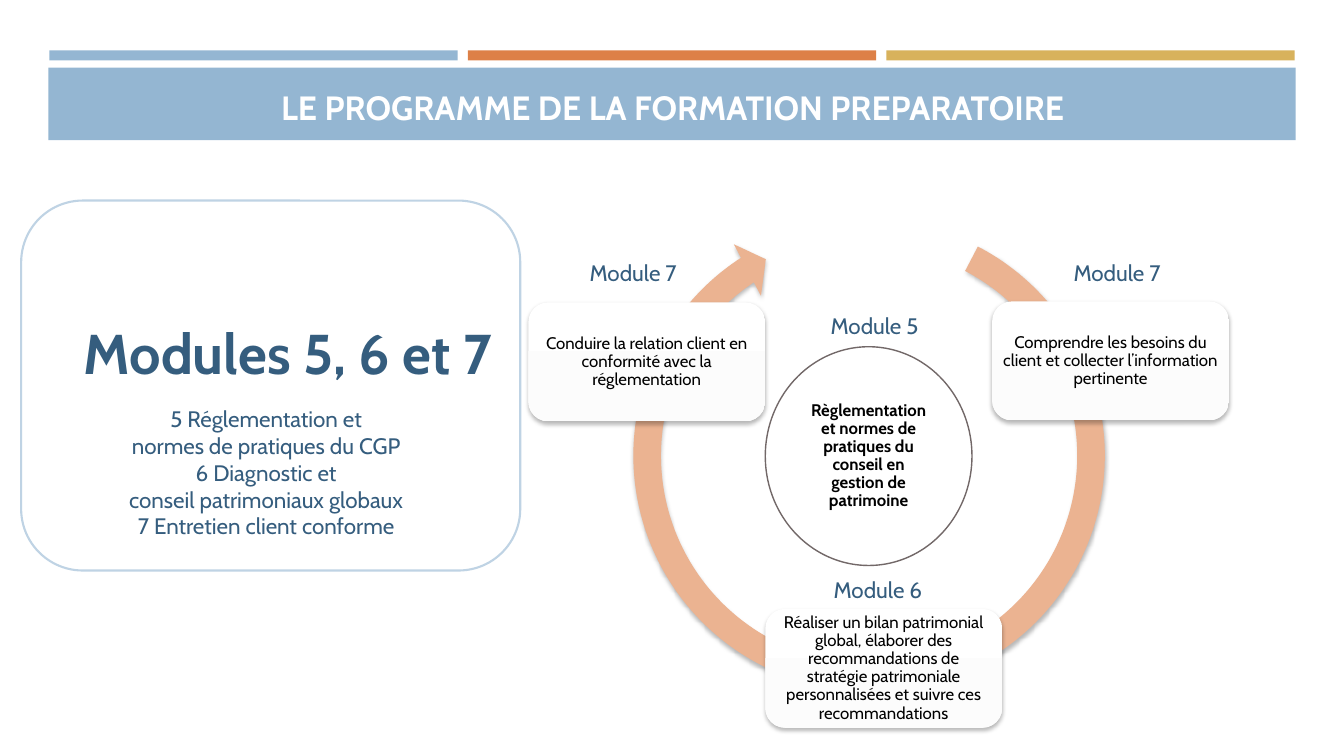
from copy import deepcopy
from lxml.etree import SubElement
from pptx import Presentation
from pptx.dml.color import RGBColor
from pptx.enum.shapes import MSO_SHAPE
from pptx.enum.text import MSO_ANCHOR, PP_ALIGN
from pptx.oxml.ns import qn
from pptx.util import Inches, Pt

FONT = "Cabin"
WHITE = RGBColor(0xFF, 0xFF, 0xFF)
BLACK = RGBColor(0, 0, 0)
PALE = RGBColor(0xFC, 0xFC, 0xFC)
BLUE = RGBColor(0x94, 0xB6, 0xD2)
NAVY = RGBColor(0x35, 0x5D, 0x7E)
SKY = RGBColor(0xBF, 0xD3, 0xE4)
RUST = RGBColor(0xDD, 0x80, 0x47)
GOLD = RGBColor(0xD8, 0xB2, 0x5C)
PEACH = RGBColor(0xEB, 0xB3, 0x91)
GREY = RGBColor(0x72, 0x68, 0x68)

CARDS = [
    (5.24, 3, "Conduire la relation client en conformité avec la réglementation"),
    (9.84, 2.99, "Comprendre les besoins du client et collecter l’information pertinente"),
    (7.59, 6.04, "Réaliser un bilan patrimonial global, élaborer des recommandations "
                 "de stratégie patrimoniale personnalisées et suivre ces recommandations"),
]
LABELS = [
    (5.75, 2.52, "Module 7"),
    (10.55, 2.52, "Module 7"),
    (8.17, 5.67, "Module 6"),
    (8.14, 3.05, "Module 5"),
]
TOPICS = [
    ["5 Réglementation et", "normes de pratiques du CGP"],
    ["6 Diagnostic et", "conseil patrimoniaux globaux"],
    ["7 Entretien client conforme"],
]


def add_shape(slide, kind, box, fill, line=None, width=1):
    """Add a flat preset shape."""
    shape = slide.shapes.add_shape(kind, *map(Inches, box))
    shape.shadow.inherit = False
    shape.fill.solid()
    shape.fill.fore_color.rgb = fill
    if line is None:
        shape.line.fill.background()
    else:
        shape.line.color.rgb = line
        shape.line.width = Pt(width)
    return shape


def add_shadow(shape):
    """Give a shape a soft shadow below it."""
    effects = shape._element.spPr.find(qn("a:effectLst"))
    outer = SubElement(effects, qn("a:outerShdw"), blurRad=str(Pt(3)),
                       dist=str(Pt(2)), dir="5400000", rotWithShape="0")
    color = SubElement(outer, qn("a:srgbClr"), val=str(BLACK))
    SubElement(color, qn("a:alpha"), val="28000")


def add_shade(shape):
    """Fill a shape with a three-stop vertical gradient."""
    fill = shape.fill
    fill.gradient()
    fill.gradient_angle = 270
    stops = next(shape._element.spPr.iter(qn("a:gsLst")))
    stops.insert(1, deepcopy(stops[0]))
    for stop, place, color in zip(fill.gradient_stops, (0, 0.41, 1), (WHITE, PALE, WHITE)):
        stop.position = place
        stop.color.rgb = color


def write(shape, paras, size, color, bold=False, align=PP_ALIGN.CENTER,
          anchor=MSO_ANCHOR.MIDDLE, space=None):
    """Write paragraphs, each a list of lines, into a shape."""
    frame = shape.text_frame
    frame.word_wrap = True
    frame.vertical_anchor = anchor
    for i, lines in enumerate(paras):
        para = frame.add_paragraph() if i else frame.paragraphs[0]
        para.alignment = align
        if space:
            para.line_spacing = space
        for j, text in enumerate(lines):
            if j:
                para.add_line_break()
            run = para.add_run()
            run.text = text
            font = run.font
            font.name, font.size, font.bold = FONT, Pt(size), bold
            font.color.rgb = color


def add_text(slide, box, paras, size, color, **style):
    """Add a text box."""
    write(slide.shapes.add_textbox(*map(Inches, box)), paras, size, color, **style)


def add_head(slide):
    """Add the three bars and the title band."""
    for i, color in enumerate((BLUE, RUST, GOLD)):
        add_shape(slide, MSO_SHAPE.RECTANGLE, (0.49 + 4.15 * i, 0.5, 4.05, 0.1), color)
    add_shape(slide, MSO_SHAPE.RECTANGLE, (0.48, 0.67, 12.37, 0.72), BLUE)
    add_text(slide, (0.64, 0.8, 12.06, 0.51), [["LE PROGRAMME DE LA FORMATION PREPARATOIRE"]],
             24, WHITE, bold=True, anchor=MSO_ANCHOR.BOTTOM)


def add_ring(slide):
    """Add the circular arrow."""
    ring = add_shape(slide, MSO_SHAPE.CIRCULAR_ARROW, (6.13, 2.03, 4.98, 4.98), PEACH)
    ring.rotation = 7.5
    for i, value in enumerate((0.055, 3.307, 137.549, 173.988, 0.058)):
        ring.adjustments[i] = value
    add_shadow(ring)


def add_card(slide, left, top, text):
    """Add a rounded card on the ring."""
    card = add_shape(slide, MSO_SHAPE.ROUNDED_RECTANGLE, (left, top, 2.35, 1.18), WHITE)
    add_shade(card)
    add_shadow(card)
    frame = card.text_frame
    frame.margin_left = frame.margin_right = Inches(0.05)
    frame.margin_top = frame.margin_bottom = Inches(0.05)
    write(card, [[text]], 12, BLACK, space=0.9)


def add_panel(slide):
    """Add the panel that lists the modules."""
    panel = add_shape(slide, MSO_SHAPE.ROUNDED_RECTANGLE, (0.21, 1.99, 4.95, 3.67),
                      WHITE, SKY, 1.5)
    panel.text_frame.margin_bottom = Inches(0.72)
    write(panel, [["Modules 5, 6 et 7"]], 40, NAVY, bold=True, align=PP_ALIGN.RIGHT)
    add_text(slide, (0.65, 3.97, 3.98, 1.45), TOPICS, 16, NAVY, anchor=MSO_ANCHOR.TOP)


def main():
    """Build the slide and save it."""
    deck = Presentation()
    deck.slide_width, deck.slide_height = Inches(13.33), Inches(7.5)
    slide = deck.slides.add_slide(deck.slide_layouts[6])
    add_head(slide)
    add_ring(slide)
    for card in CARDS:
        add_card(slide, *card)
    for left, top, text in LABELS:
        add_text(slide, (left, top, 1.14, 0.37), [[text]], 16, NAVY,
                 align=PP_ALIGN.LEFT, anchor=MSO_ANCHOR.TOP)
    add_panel(slide)
    core = add_shape(slide, MSO_SHAPE.OVAL, (7.59, 3.44, 2.05, 2.17), WHITE, GREY)
    write(core, [["Règlementation et normes de pratiques du conseil en gestion de patrimoine"]],
          12, BLACK, bold=True, space=0.9)
    deck.save("out.pptx")


if __name__ == "__main__":
    main()
